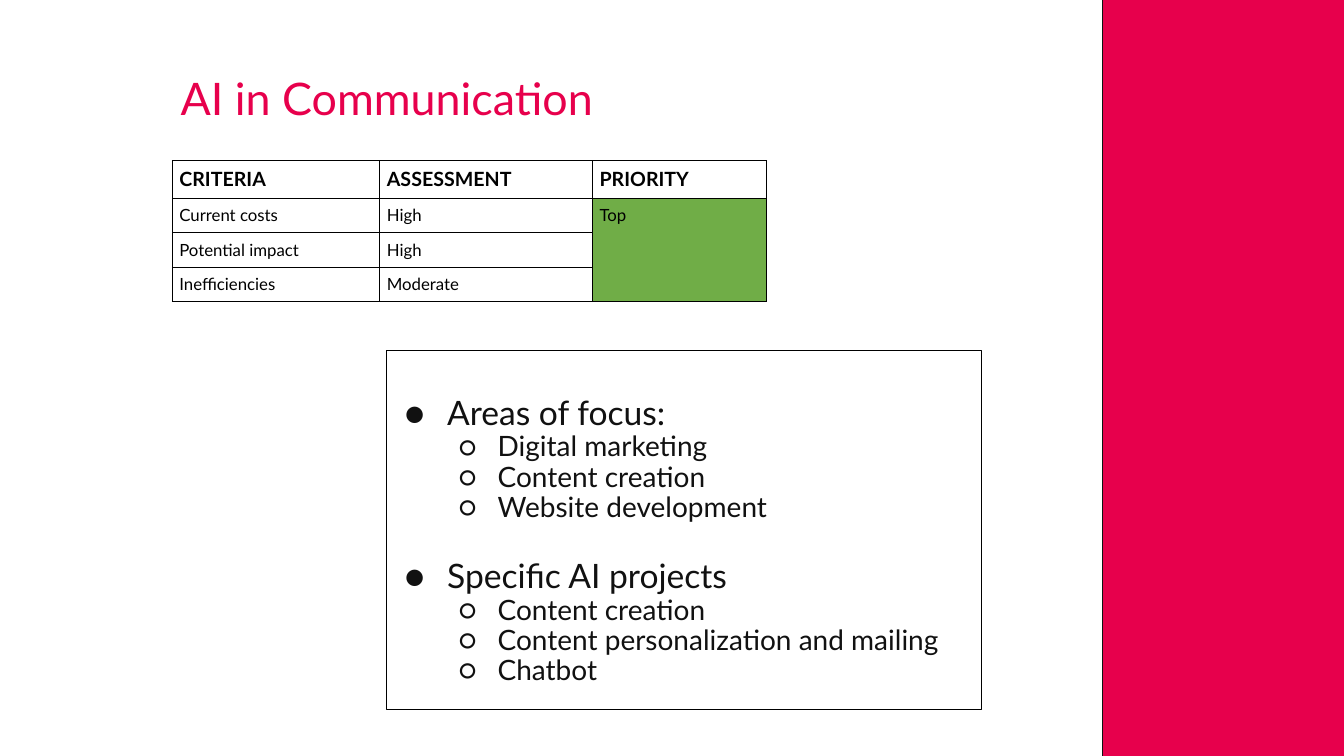
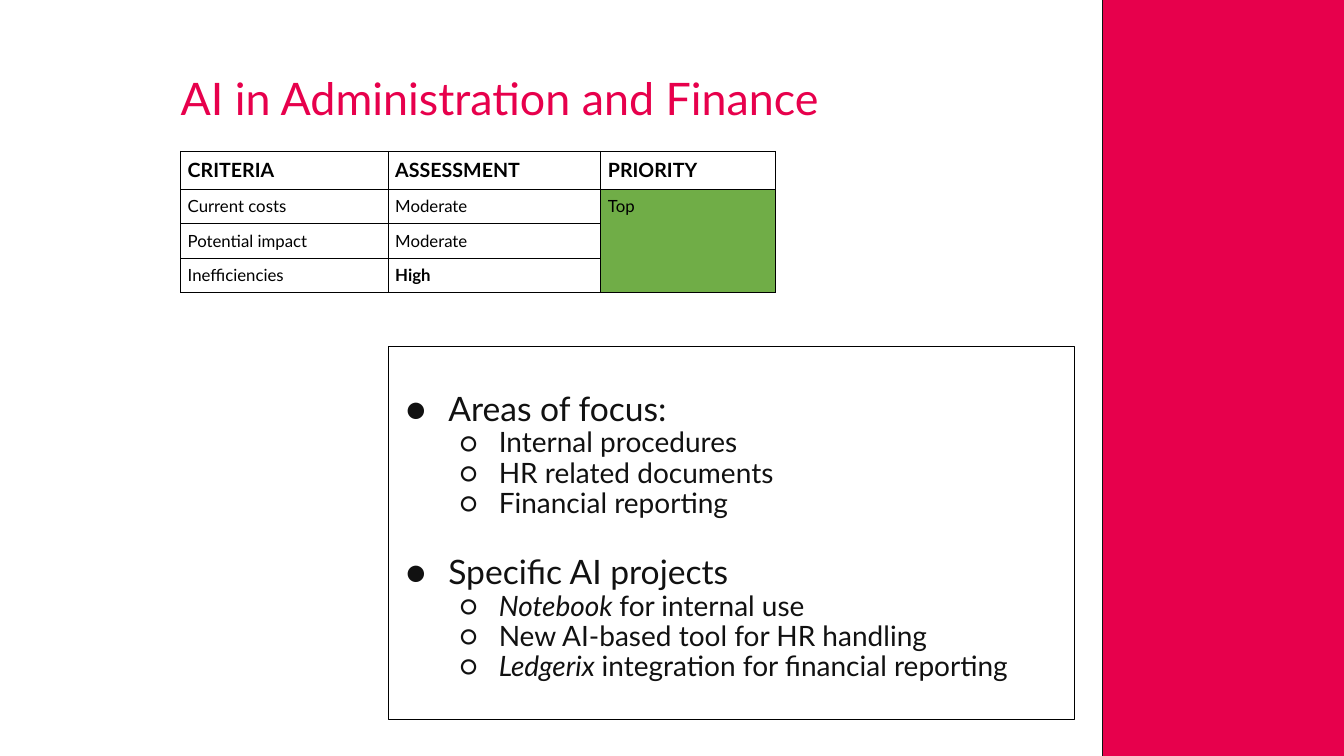
from dataclasses import dataclass

from lxml import etree
from pptx import Presentation
from pptx.dml.color import RGBColor
from pptx.enum.shapes import MSO_SHAPE
from pptx.enum.text import MSO_ANCHOR, MSO_AUTO_SIZE, PP_ALIGN
from pptx.oxml.ns import qn
from pptx.util import Cm, Pt

RECT = MSO_SHAPE.RECTANGLE
TOP = MSO_ANCHOR.TOP
FIXED = MSO_AUTO_SIZE.NONE
LEFT, JUSTIFY = PP_ALIGN.LEFT, PP_ALIGN.JUSTIFY


@dataclass(frozen=True)
class Theme:
    font: str = "Lato"
    accent: str = "E7004C"
    ink: str = "111111"
    black: str = "000000"
    white: str = "FFFFFF"
    green: str = "70AD47"
    title: int = 32
    topic: int = 24
    item: int = 20
    head: int = 14
    cell: int = 12
    leading: float = 0.9
    line: float = 0.75
    border: float = 0.5


THEME = Theme()
TITLE_ONLY = 5
COLS = (5.23, 5.36, 4.39)
HEAD_ROW, BODY_ROW = 0.94, 0.86
HEADS = ("CRITERIA", "ASSESSMENT", "PRIORITY")
CRITERIA = ("Current costs", "Potential impact", "Inefficiencies")

# Each item is an (italic lead, plain rest) pair.
SLIDES = (
    {
        "title": "AI in Communication",
        "table": (4.34, 4.04),
        "marks": ("High", "High", "Moderate"),
        "bold": (),
        "box": (9.75, 8.84, 14.99, 9.04),
        "topics": (
            ("Areas of focus:", (
                ("", "Digital marketing"),
                ("", "Content creation"),
                ("", "Website development"))),
            ("Specific AI projects", (
                ("", "Content creation"),
                ("", "Content personalization and mailing"),
                ("", "Chatbot"))),
        ),
    },
    {
        "title": "AI in Administration and Finance",
        "table": (4.55, 3.81),
        "marks": ("Moderate", "Moderate", "High"),
        "bold": ("High",),
        "box": (9.78, 8.74, 17.3, 9.4),
        "topics": (
            ("Areas of focus:", (
                ("", "Internal procedures"),
                ("", "HR related documents"),
                ("", "Financial reporting"))),
            ("Specific AI projects", (
                ("Notebook ", "for internal use"),
                ("", "New AI-based tool for HR handling"),
                ("Ledgerix ", "integration for financial reporting"))),
        ),
    },
)


def rgb(color):
    return RGBColor.from_string(color)


def style(run, size, color, bold=False, italic=False):
    font = run.font
    font.name, font.size = THEME.font, Pt(size)
    font.color.rgb = rgb(color)
    font.bold, font.italic = bold, italic


def set_line(shape, color):
    shape.line.color.rgb = rgb(color)
    shape.line.width = Pt(THEME.line)


def set_insets(frame, left, top, right, bottom):
    frame.margin_left, frame.margin_top = Cm(left), Cm(top)
    frame.margin_right, frame.margin_bottom = Cm(right), Cm(bottom)


def set_bullet(para, char, left, hang):
    props = para._p.get_or_add_pPr()
    props.set("marL", str(Cm(left)))
    props.set("indent", str(-Cm(hang)))
    color = etree.SubElement(props, qn("a:buClr"))
    etree.SubElement(color, qn("a:srgbClr"), val=THEME.ink)
    etree.SubElement(props, qn("a:buFont"), typeface=THEME.font)
    etree.SubElement(props, qn("a:buChar"), char=char)


def set_borders(cell):
    """Draw all four sides; call before the cell is filled."""
    props = cell._tc.get_or_add_tcPr()
    for side in ("lnL", "lnR", "lnT", "lnB"):
        line = etree.SubElement(props, qn(f"a:{side}"), w=str(Pt(THEME.border)))
        fill = etree.SubElement(line, qn("a:solidFill"))
        etree.SubElement(fill, qn("a:srgbClr"), val=THEME.black)


def add_title(slide, text):
    title = slide.shapes.title
    title.left, title.top = Cm(4.55), Cm(1.93)
    title.width, title.height = Cm(27), Cm(1.68)
    frame = title.text_frame
    frame.text = text
    frame.word_wrap, frame.auto_size = True, FIXED
    frame.vertical_anchor = TOP
    set_insets(frame, 0, 0, 0, 0)
    para = frame.paragraphs[0]
    para.alignment, para.line_spacing = LEFT, THEME.leading
    style(para.runs[0], THEME.title, THEME.accent)


def add_band(slide):
    band = slide.shapes.add_shape(
        RECT, Cm(27.79), Cm(-0.15), Cm(6.58), Cm(19.35))
    band.shadow.inherit = False
    band.fill.solid()
    band.fill.fore_color.rgb = rgb(THEME.accent)
    set_line(band, THEME.ink)


def fill_cell(cell, text, size, bold, color):
    set_borders(cell)
    cell.fill.solid()
    cell.fill.fore_color.rgb = rgb(color)
    set_insets(cell, 0.18, 0.18, 0.18, 0.18)
    cell.vertical_anchor = TOP
    cell.text = text
    para = cell.text_frame.paragraphs[0]
    para.alignment = JUSTIFY
    for run in para.runs:
        style(run, size, THEME.black, bold)


def add_grid(slide, spot, marks, strong):
    """Add the criteria table with its merged priority cell."""
    left, top = spot
    ranks = ("Top",) + ("",) * (len(CRITERIA) - 1)
    rows = (HEADS, *zip(CRITERIA, marks, ranks))
    height = HEAD_ROW + BODY_ROW * len(CRITERIA)
    table = slide.shapes.add_table(
        len(rows), len(COLS), Cm(left), Cm(top),
        Cm(sum(COLS)), Cm(height)).table
    table.first_row = table.horz_banding = False
    for col, width in zip(table.columns, COLS):
        col.width = Cm(width)
    for r, texts in enumerate(rows):
        head = r == 0
        table.rows[r].height = Cm(HEAD_ROW if head else BODY_ROW)
        size = THEME.head if head else THEME.cell
        for c, text in enumerate(texts):
            rank = not head and c == len(COLS) - 1
            fill_cell(table.cell(r, c), text, size, head or text in strong,
                      THEME.green if rank else THEME.white)
    last = len(COLS) - 1
    table.cell(1, last).merge(table.cell(len(CRITERIA), last))


def add_topic(para, text, first):
    para.text = text
    para.line_spacing = THEME.leading
    if not first:
        para.space_before = Pt(26)
    set_bullet(para, "●", 1.27, 1.07)
    style(para.runs[0], THEME.topic, THEME.ink)


def add_item(para, lead, rest):
    para.level, para.line_spacing = 1, THEME.leading
    set_bullet(para, "○", 2.54, 0.99)
    for text, italic in ((lead, True), (rest, False)):
        if text:
            run = para.add_run()
            run.text = text
            style(run, THEME.item, THEME.ink, italic=italic)


def add_box(slide, place, topics):
    box = slide.shapes.add_textbox(*map(Cm, place))
    set_line(box, THEME.black)
    frame = box.text_frame
    frame.word_wrap, frame.auto_size = True, FIXED
    frame.vertical_anchor = TOP
    set_insets(frame, 0.25, 1.15, 0.25, 0.13)
    for n, (topic, items) in enumerate(topics):
        para = frame.add_paragraph() if n else frame.paragraphs[0]
        add_topic(para, topic, n == 0)
        for lead, rest in items:
            add_item(frame.add_paragraph(), lead, rest)


def main():
    deck = Presentation()
    deck.slide_width, deck.slide_height = Cm(33.87), Cm(19.05)
    for data in SLIDES:
        slide = deck.slides.add_slide(deck.slide_layouts[TITLE_ONLY])
        add_title(slide, data["title"])
        add_box(slide, data["box"], data["topics"])
        add_grid(slide, data["table"], data["marks"], data["bold"])
        add_band(slide)
    deck.save("out.pptx")


if __name__ == "__main__":
    main()
